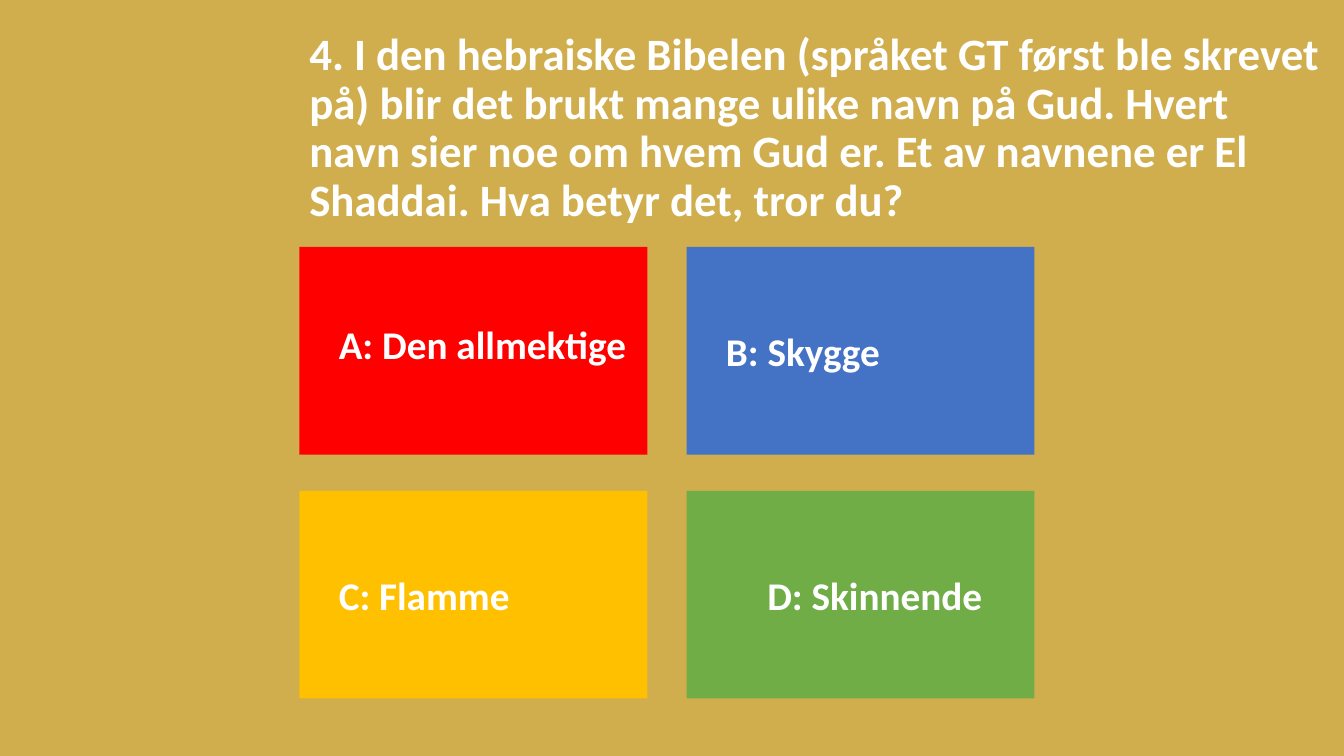
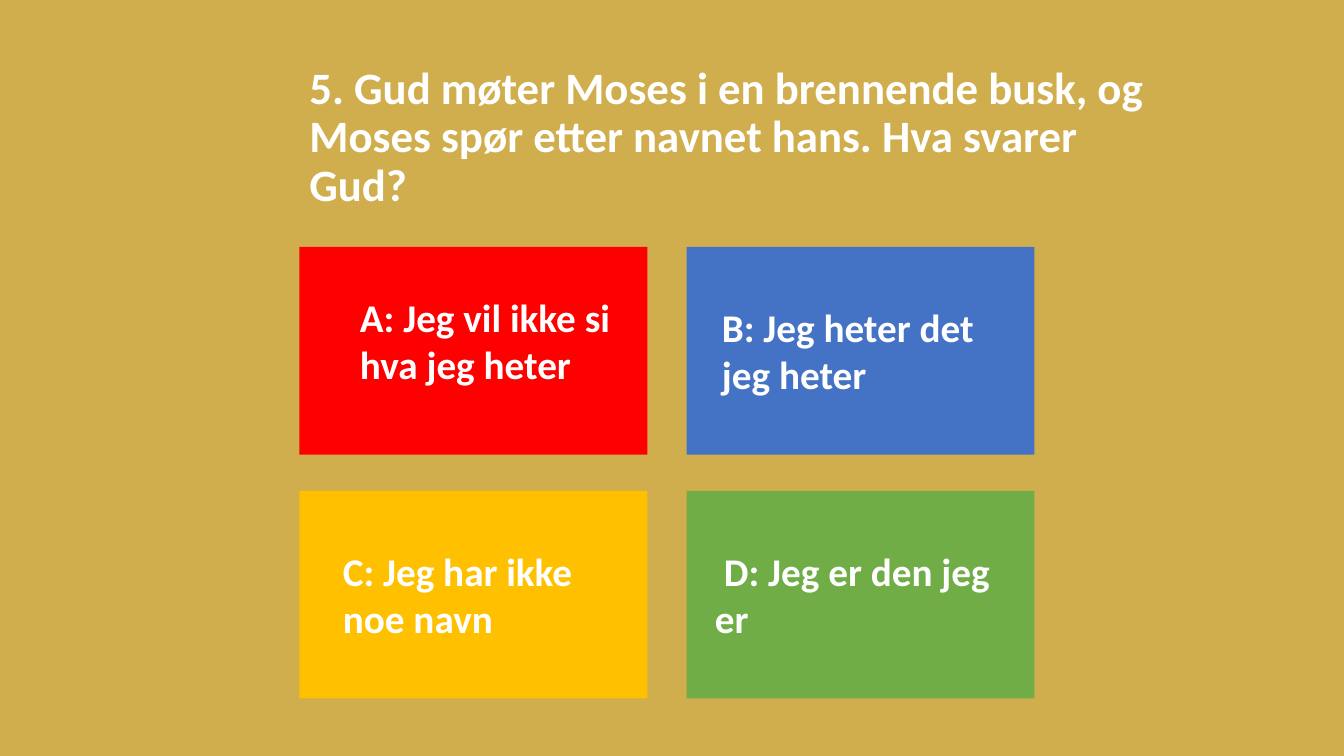
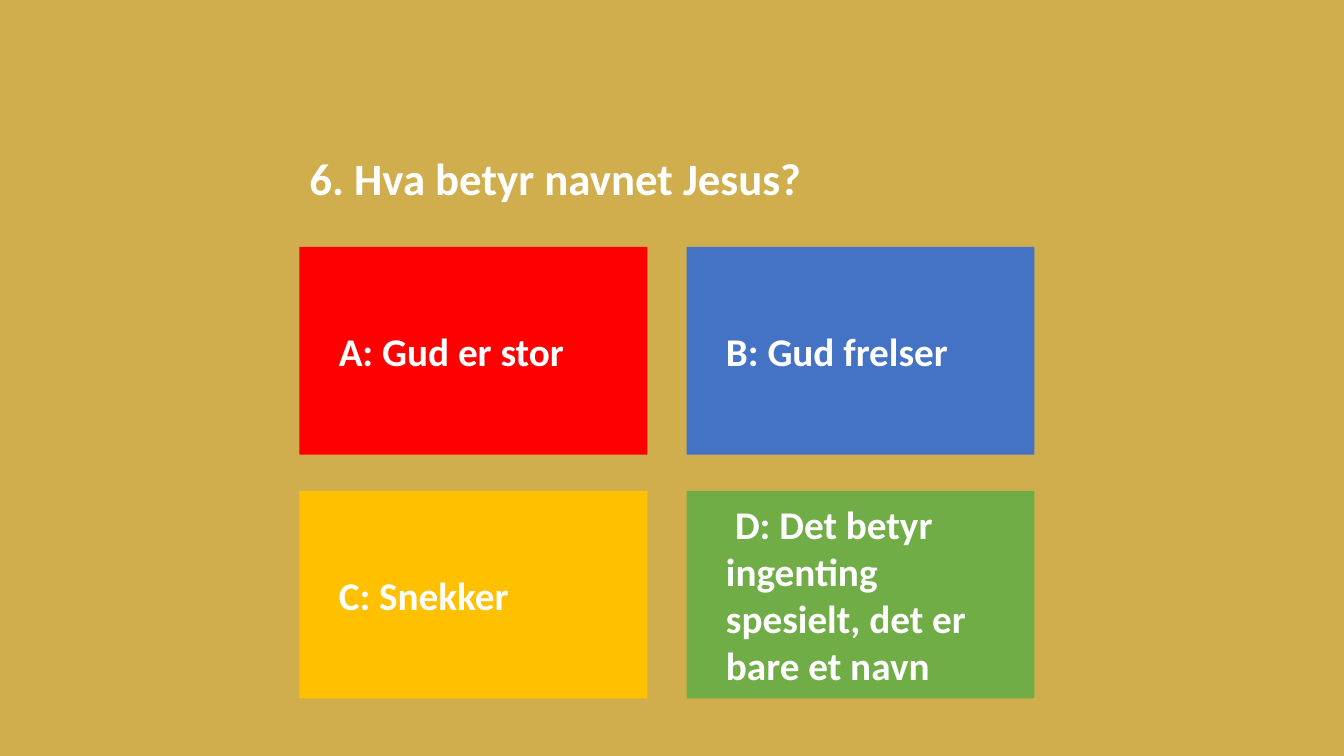
from pptx import Presentation
from pptx.dml.color import RGBColor
from pptx.enum.shapes import MSO_SHAPE
from pptx.enum.text import MSO_ANCHOR, PP_ALIGN
from pptx.util import Inches, Pt

COLORS = {
    "background": "D0AE4E",
    "text": "FFFFFF",
    "A": "FF0000",
    "B": "4472C4",
    "C": "FFC000",
    "D": "70AD47",
}
FONT = "Calibri"

# Answer grid in inches: two columns, two rows
LEFT, TOP = 2.97, 2.45
CARD_W, CARD_H = 3.45, 2.06
GAP_X, GAP_Y = 0.39, 0.36
TITLE_H = 2.05

# Text insets: left, top, right, bottom
TITLE_INSETS = (0.1, 0.05, 0.1, 0.05)
WIDE = (0.39, 0.2, 0.2, 0.2)
D_INDENT = 0.09

# Each question: text, title width, title bottom, answers as (text, insets, alignment)
QUESTIONS = [
    ("4. I den hebraiske Bibelen (språket GT først ble skrevet på) blir det brukt "
     "mange ulike navn på Gud. Hvert navn sier noe om hvem Gud er. Et av navnene "
     "er El Shaddai. Hva betyr det, tror du?", 10.23, 2.29,
     [("A: Den allmektige", (0.39, 0.2, 0.1, 0.34), PP_ALIGN.LEFT),
      ("B: Skygge", WIDE, PP_ALIGN.LEFT),
      ("C: Flamme", WIDE, PP_ALIGN.LEFT),
      ("D: Skinnende", WIDE, PP_ALIGN.CENTER)]),
    ("5. Gud møter Moses i en brennende busk, og Moses spør etter navnet hans. "
     "Hva svarer Gud?", 8.69, 2.14,
     [("A: Jeg vil ikke si hva jeg heter", (0.6, 0.05, 0.2, 0.26), PP_ALIGN.LEFT),
      ("B: Jeg heter det jeg heter", (0.35, 0.05, 0.1, 0.05), PP_ALIGN.LEFT),
      ("C: Jeg har ikke noe navn", (0.43, 0.05, 0.1, 0.05), PP_ALIGN.LEFT),
      ("D: Jeg er den jeg er", (0.28, 0.05, 0.1, 0.05), PP_ALIGN.LEFT)]),
    ("6. Hva betyr navnet Jesus?", 8.69, 2.08,
     [("A: Gud er stor", WIDE, PP_ALIGN.LEFT),
      ("B: Gud frelser", WIDE, PP_ALIGN.LEFT),
      ("C: Snekker", WIDE, PP_ALIGN.LEFT),
      ("D: Det betyr ingenting spesielt, det er bare et navn", WIDE, PP_ALIGN.LEFT)]),
]


def rgb(name):
    return RGBColor.from_string(COLORS[name])


def write(sp, text, size, anchor, insets, align=PP_ALIGN.LEFT):
    """Fill a shape with one bold white paragraph and return it."""
    tf = sp.text_frame
    tf.word_wrap = True
    tf.vertical_anchor = anchor
    tf.margin_left, tf.margin_top, tf.margin_right, tf.margin_bottom = map(Inches, insets)
    p = tf.paragraphs[0]
    p.text = text
    p.alignment = align
    p.font.name, p.font.size, p.font.bold = FONT, Pt(size), True
    p.font.color.rgb = rgb("text")
    return p


def add_title(s, text, width, bottom):
    """Question text that grows upwards from its bottom edge."""
    box = (LEFT, bottom - TITLE_H, width, TITLE_H)
    sp = s.shapes.add_textbox(*map(Inches, box))
    p = write(sp, text, 32, MSO_ANCHOR.BOTTOM, TITLE_INSETS)
    p.line_spacing = 0.9


def add_card(s, letter, box, text, insets, align):
    """One coloured answer card."""
    sp = s.shapes.add_shape(MSO_SHAPE.RECTANGLE, *map(Inches, box))
    sp.shadow.inherit = False
    sp.fill.solid()
    sp.fill.fore_color.rgb = rgb(letter)
    sp.line.fill.background()
    p = write(sp, text, 28, MSO_ANCHOR.MIDDLE, insets, align)
    if letter == "D":
        p._p.get_or_add_pPr().set("indent", str(Inches(D_INDENT)))


def add_question(prs, question, width, bottom, answers):
    """A quiz slide: title above a two by two grid of cards."""
    s = prs.slides.add_slide(prs.slide_layouts[6])
    add_title(s, question, width, bottom)
    for i, (letter, answer) in enumerate(zip("ABCD", answers)):
        row, col = divmod(i, 2)
        box = (LEFT + col * (CARD_W + GAP_X), TOP + row * (CARD_H + GAP_Y), CARD_W, CARD_H)
        add_card(s, letter, box, *answer)


def main():
    prs = Presentation()
    prs.slide_width, prs.slide_height = Inches(13.33), Inches(7.5)
    # Shared background
    fill = prs.slide_master.background.fill
    fill.solid()
    fill.fore_color.rgb = rgb("background")
    for question in QUESTIONS:
        add_question(prs, *question)
    prs.save("out.pptx")


if __name__ == "__main__":
    main()
